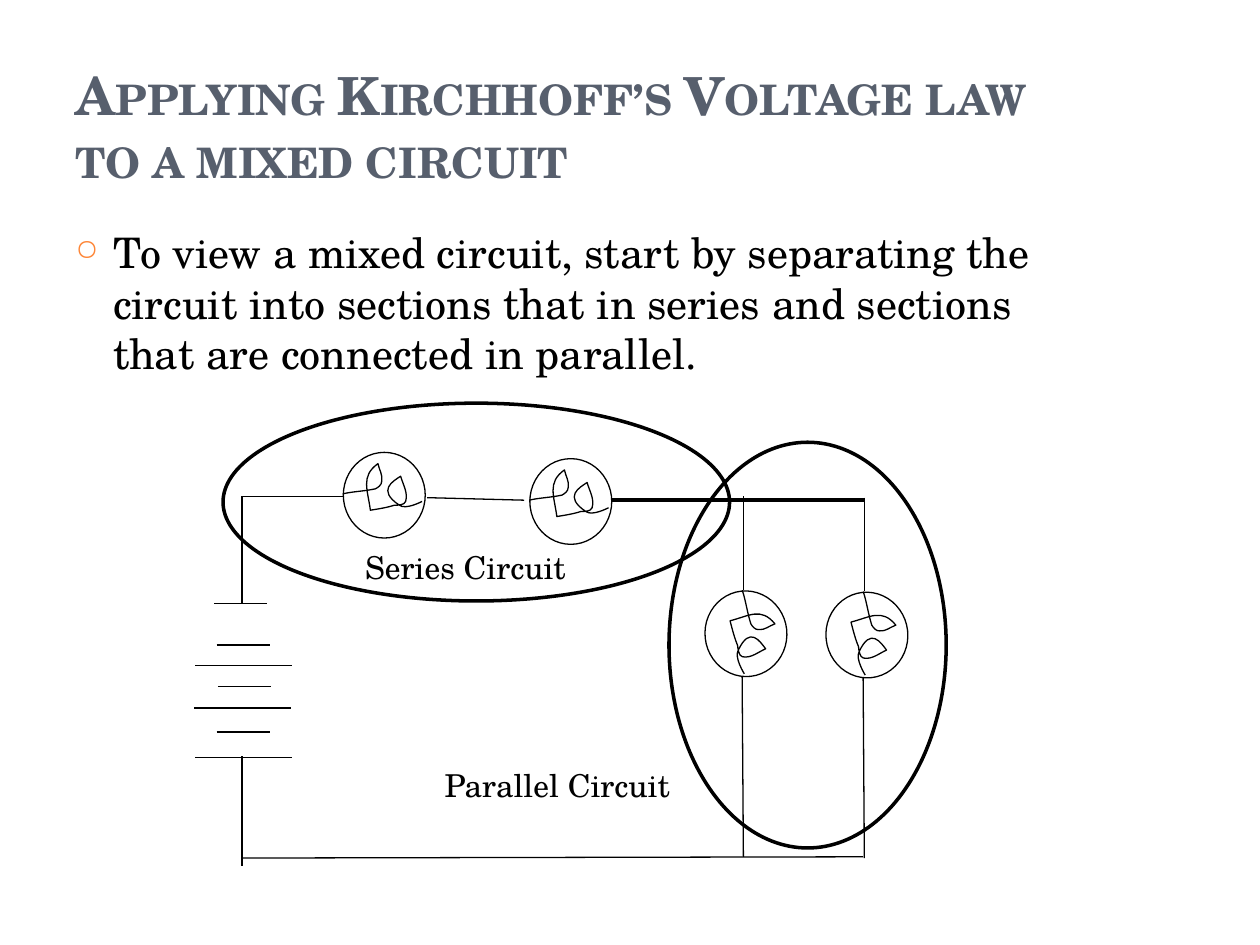
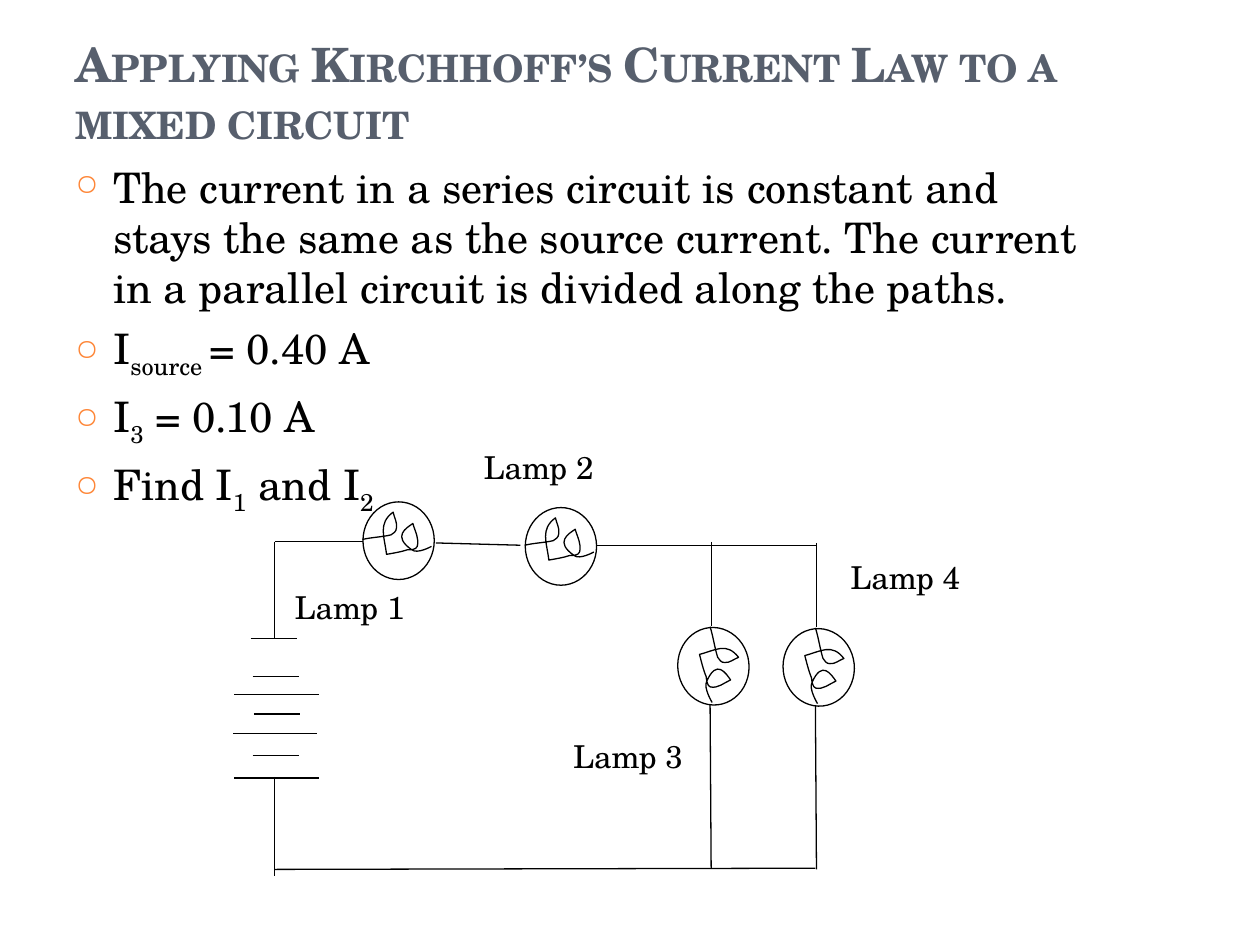
from math import cos, sin, radians
from pptx import Presentation
from pptx.util import Inches, Pt
from pptx.dml.color import RGBColor
from pptx.enum.shapes import MSO_SHAPE, MSO_CONNECTOR
from pptx.enum.text import MSO_ANCHOR
from pptx.oxml.ns import qn
from lxml.etree import SubElement

FONT = "TeX Gyre Schola"
HEX = {"title": "575F6D", "bullet": "FE8637", "ink": "000000", "paper": "FFFFFF"}
LEFT, WIDE, BASE = 0.5, 8.17, 7.08
THIN = 0.75

# Slide content; in the body, text between bars is subscript
SLIDES = [
    {
        "title": "Applying Kirchhoff’s Voltage law to a mixed circuit",
        "size": 30, "split": (1.55, 1.75),
        "body": ["To view a mixed circuit, start by separating the circuit into "
                 "sections that in series and sections that are connected in parallel."],
        "loop": (1.92, 3.94, 4.94, 2.87), "feed": 2.25,
        "rings": [(1.77, 3.2, 4.02, 1.57), (5.31, 3.51, 2.2, 3.22)],
        "notes": [("Parallel Circuit", 3.43, 6.03), ("Series Circuit", 2.8, 4.3)],
        "span": 2.13,
    },
    {
        "title": "Applying Kirchhoff’s Current Law to a mixed circuit",
        "size": 27, "split": (1.23, 1.23),
        "body": ["The current in a series circuit is constant and stays the same as the "
                 "source current. The current in a parallel circuit is divided along the paths.",
                 "I|source |= 0.40 A", "I|3| = 0.10 A", "Find I|1| and I|2"],
        "loop": (2.18, 4.3, 4.3, 2.6), "feed": THIN,
        "rings": [],
        "notes": [("Lamp 1", 2.24, 4.62), ("Lamp 2", 3.74, 3.51),
                  ("Lamp 4", 6.65, 4.38), ("Lamp 3", 4.45, 5.8)],
        "span": 1.89,
    },
]

# Circuit, measured from the top left corner of a loop of this size
LOOP = (4.94, 2.87)
FEED = (2.91, 0.03, 4.94, 0.03)
WIRES = [
    (4.94, 0.01, 4.94, 0.75), (4.93, 1.41, 4.94, 2.87),
    (0, 0, 0.84, 0),
    (3.98, 0, 3.98, 0.74), (3.97, 1.4, 3.98, 2.86),
    (2.24, 0.03, 1.47, 0.01),
    (0, 0, 0, 0.85), (0, 2.06, 0, 2.93),
]
RETURN = (0, 2.87, 4.93, 2.86)
PLATES = {0.42: [(-0.22, 0.85), (-0.2, 1.18), (-0.19, 1.51), (-0.2, 1.87)],
          0.77: [(-0.37, 1.34), (-0.38, 1.68), (-0.37, 2.07)]}
LAMPS = [(1.13, -0.01, 0), (2.61, 0.04, 0), (4, 1.09, 83.7), (4.96, 1.1, 83.7)]
BULB = (0.65, 0.68)

# Filament: start, then curves of two handles and an end, from the lamp's centre
FILAMENT = [
    (-0.33, -0.01),
    (-0.24, -0.03), (-0.16, -0.03), (-0.07, -0.05),
    (-0.05, -0.06), (-0.02, -0.08), (-0.02, -0.11),
    (-0.01, -0.16), (-0.04, -0.2), (-0.05, -0.25),
    (-0.19, -0.15), (-0.13, -0.04), (-0.11, 0.12),
    (-0.05, 0.11), (0.02, 0.1), (0.08, 0.08),
    (0.11, 0.08), (0.16, 0.08), (0.17, 0.05),
    (0.19, -0.02), (0.15, -0.08), (0.13, -0.15),
    (0.07, -0.11), (-0.06, -0.04), (0.12, 0.08),
    (0.17, 0.12), (0.3, 0.05), (0.3, 0.05),
]


def tint(key):
    return RGBColor.from_string(HEX[key])


def style(run, size, key="ink"):
    run.font.name, run.font.size = FONT, Pt(size)
    run.font.color.rgb = tint(key)


def frame(slide, x, y, w, h):
    box = slide.shapes.add_textbox(*map(Inches, (x, y, w, h)))
    box.text_frame.word_wrap = True
    return box.text_frame


def head(slide, text, size, end):
    tf = frame(slide, LEFT, 0.3, WIDE, end - 0.3)
    tf.vertical_anchor = MSO_ANCHOR.BOTTOM
    tf.text = text
    run = tf.paragraphs[0].runs[0]
    style(run, size, "title")
    run.font.bold = True
    run.font._element.set("cap", "small")


def body(slide, items, top):
    tf = frame(slide, LEFT, top, WIDE, BASE - top)
    for i, item in enumerate(items):
        para = tf.add_paragraph() if i else tf.paragraphs[0]
        para.space_before = Pt(6)
        props = para._p.get_or_add_pPr()
        props.set("marL", str(Inches(0.3)))
        props.set("indent", str(-Inches(0.3)))
        color = SubElement(props, qn("a:buClr"))
        SubElement(color, qn("a:srgbClr"), val=HEX["bullet"])
        SubElement(props, qn("a:buSzPct"), val="70000")
        SubElement(props, qn("a:buFont"), typeface="OpenSymbol")
        SubElement(props, qn("a:buChar"), char="○")
        for j, part in enumerate(item.split("|")):
            run = para.add_run()
            run.text = part
            style(run, 24)
            if j % 2:
                run.font._element.set("baseline", "-25000")


def note(slide, text, x, y, w):
    tf = frame(slide, x, y, w, 0.4)
    tf.text = text
    style(tf.paragraphs[0].runs[0], 18)


def outline(shape, width, fill=None):
    shape.shadow.inherit = False
    shape.line.color.rgb, shape.line.width = tint("ink"), Pt(width)
    if fill:
        shape.fill.solid()
        shape.fill.fore_color.rgb = tint(fill)
    else:
        shape.fill.background()


def oval(slide, x, y, w, h, width, fill=None):
    shape = slide.shapes.add_shape(MSO_SHAPE.OVAL, *map(Inches, (x, y, w, h)))
    outline(shape, width, fill)
    return shape


def curve(slide, points):
    """Draw a chain of cubic curves: a start, then three points for each."""
    build = slide.shapes.build_freeform(*points[0])
    build.add_line_segments(points[1:], close=False)
    shape = build.convert_to_shape()
    lines = list(shape._element.iter(qn("a:lnTo")))
    for i in range(0, len(lines), 3):
        bend = SubElement(lines[i].getparent(), qn("a:cubicBezTo"))
        for line in lines[i:i + 3]:
            bend.append(line[0])
            line.getparent().remove(line)
    outline(shape, THIN)
    return shape


def circuit(slide, loop, feed):
    ox, oy, w, h = loop
    sx, sy = w / LOOP[0], h / LOOP[1]

    def spot(x, y):
        return ox + sx * x, oy + sy * y

    def wire(x1, y1, x2, y2, width=THIN):
        ends = map(Inches, spot(x1, y1) + spot(x2, y2))
        line = slide.shapes.add_connector(MSO_CONNECTOR.STRAIGHT, *ends)
        line.line.color.rgb, line.line.width = tint("ink"), Pt(width)
        SubElement(line._element.spPr, qn("a:effectLst"))

    def lamp(cx, cy, turn):
        x, y = spot(cx, cy)
        w, h = BULB[0] * sx, BULB[1] * sy
        kx, ky = sx, sy
        if turn:
            # A turned lamp swaps its sides, which stretches its filament
            w, h = h, w
            kx, ky = 1.05 * sy, 0.95 * sx
        oval(slide, x - w / 2, y - h / 2, w, h, THIN, "paper").rotation = turn
        coil = curve(slide, [(Inches(x + kx * px), Inches(y + ky * py))
                             for px, py in FILAMENT])
        # Swing the filament around the middle of the lamp
        dx = coil.left + coil.width / 2 - Inches(x)
        dy = coil.top + coil.height / 2 - Inches(y)
        c, s = cos(radians(turn)), sin(radians(turn))
        coil.left += int(dx * c - dy * s - dx)
        coil.top += int(dx * s + dy * c - dy)
        coil.rotation = turn

    for ends in WIRES:
        wire(*ends)
    wire(*FEED, feed)
    for length, starts in PLATES.items():
        for x, y in starts:
            wire(x, y, x + length, y)
    for item in LAMPS:
        lamp(*item)
    wire(*RETURN)


def main():
    deck = Presentation()
    deck.slide_width, deck.slide_height = Inches(10), Inches(7.5)
    for data in SLIDES:
        slide = deck.slides.add_slide(deck.slide_layouts[6])
        end, top = data["split"]
        head(slide, data["title"], data["size"], end)
        body(slide, data["body"], top)
        circuit(slide, data["loop"], data["feed"])
        for ring in data["rings"]:
            oval(slide, *ring, 2)
        for text, x, y in data["notes"]:
            note(slide, text, x, y, data["span"])
    deck.save("out.pptx")


if __name__ == "__main__":
    main()
